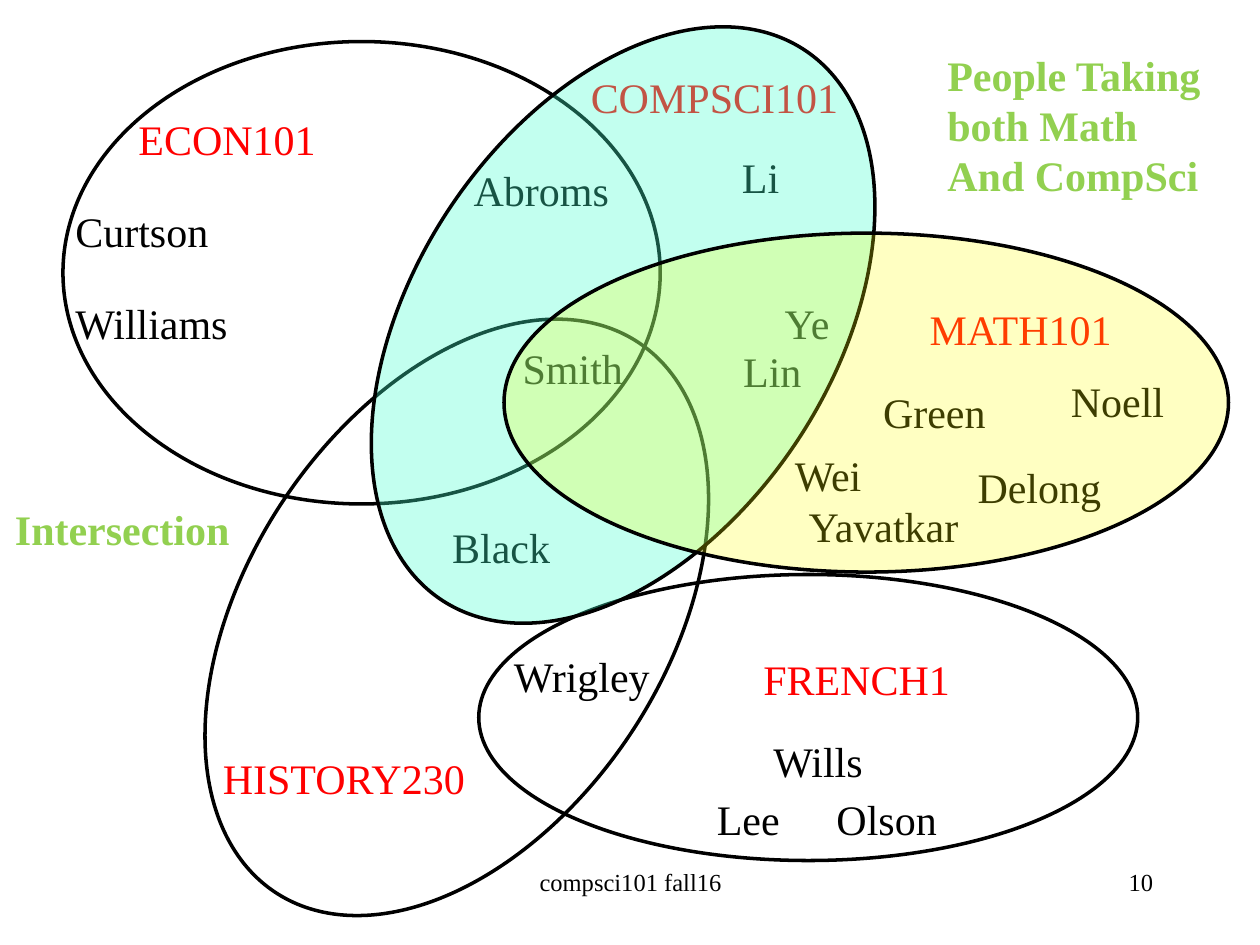
from pptx import Presentation
from pptx.dml.color import RGBColor
from pptx.enum.shapes import MSO_SHAPE as Shape
from pptx.enum.text import MSO_AUTO_SIZE as AutoSize, PP_ALIGN as Align
from pptx.oxml.ns import qn
from pptx.util import Inches, Pt
from lxml import etree

# Grid of 100 columns by 75 rows of square cells
CELL = Inches(0.1)
COLUMNS, ROWS = 100, 75
BLACK, RED, GREEN, WHITE = "000000", "FF0000", "92D050", "FFFFFF"

presentation = Presentation()
presentation.slide_width = COLUMNS * CELL
presentation.slide_height = ROWS * CELL
slide = presentation.slides.add_slide(presentation.slide_layouts[6])


def paint(fill, color, alpha=100):
    fill.solid()
    fill.fore_color.rgb = RGBColor.from_string(color)
    if alpha < 100:
        color_element = fill._xPr.find(qn("a:solidFill"))[0]
        etree.SubElement(color_element, qn("a:alpha"), val=str(alpha * 1000))


def add_text(text, column, row, width, height=5, size=24, color=BLACK,
             bold=False, align=Align.LEFT, wrap=False, background=None):
    box = slide.shapes.add_textbox(*(int(n * CELL) for n in (column, row, width, height)))
    if background:
        paint(box.fill, background)
    frame = box.text_frame
    frame.word_wrap = wrap
    frame.auto_size = AutoSize.NONE if wrap else AutoSize.SHAPE_TO_FIT_TEXT
    frame.text = text
    for paragraph in frame.paragraphs:
        paragraph.alignment = align
        font = paragraph.runs[0].font
        font.name, font.size, font.bold = "Times New Roman", Pt(size), bold
        paint(font.fill, color)


# Course sets: column, row, width, height, rotation, fill, opacity
history = (10.1, 32.4, 52.3, 33.2, 123.4, None, 100)
french = (38, 45.6, 52.3, 22.7, 0, None, 100)
econ = (5, 3.3, 47.4, 36.7, 0, None, 100)
compsci = (23.3, 9.2, 52.3, 33.2, 123.4, "47FFD1", 33)
math = (40, 18.5, 57.5, 26.9, 0, "FFFF00", 24)

# Course titles and student names: text, column, row, width
courses = [
    ("COMPSCI101", 45.9, 5.2, 21.9),
    ("MATH101", 72.8, 23.6, 16.6),
    ("ECON101", 10, 8.5, 16.2),
    ("HISTORY230", 16.7, 59.2, 21.4),
    ("FRENCH1", 59.6, 51.4, 17),
]
students = [
    ("Smith", 40.5, 26.7, 10),
    ("Green", 69.1, 30.2, 10.2),
    ("Ye", 61.3, 23.1, 5.6),
    ("Li", 57.9, 11.5, 5),
    ("Black", 34.9, 40.9, 9.9),
    ("Lee", 55.9, 62.5, 7.1),
    ("Olson", 65.4, 62.5, 10.1),
    ("Wills", 60.4, 57.9, 9.2),
    ("Wrigley", 39.8, 51.1, 12.9),
    ("Abroms", 36.6, 12.6, 12.9),
    ("Williams", 5, 23.1, 14.2),
    ("Curtson", 5, 15.8, 12.7),
    ("Lin", 58, 26.9, 6.7),
    ("Wei", 62.1, 35.2, 7.3),
    ("Yavatkar", 63.2, 39.2, 14),
    ("Delong", 76.6, 36.1, 11.9),
    ("Noell", 84, 29.3, 9.5),
]

# Plain sets lie below the labels, tinted sets above them
for layer, labels in (((history, french, econ), ((courses, RED), (students, BLACK))),
                      ((compsci, math), ())):
    for column, row, width, height, rotation, color, alpha in layer:
        ellipse = slide.shapes.add_shape(
            Shape.OVAL, *(int(n * CELL) for n in (column, row, width, height)))
        ellipse.rotation = rotation
        ellipse.shadow.inherit = False
        paint(ellipse.line.fill, BLACK)
        ellipse.line.width = Pt(2)
        if color:
            paint(ellipse.fill, color, alpha)
        else:
            ellipse.fill.background()
    for entries, color in labels:
        for text, column, row, width in entries:
            add_text(text, column, row, width, color=color)

# Captions
add_text("People Taking\nboth Math\nAnd CompSci", 74.2, 3.4, 23.1, 13.1,
         color=GREEN, bold=True)
add_text("Intersection", 0.2, 39.5, 19.2, color=GREEN, bold=True, background=WHITE)

# Footer and slide number
add_text("compsci101 fall16", 34.2, 68.3, 31.7, size=14, align=Align.CENTER, wrap=True)
add_text("10", 71.7, 68.3, 20.8, size=14, align=Align.RIGHT, wrap=True)

presentation.save("out.pptx")
